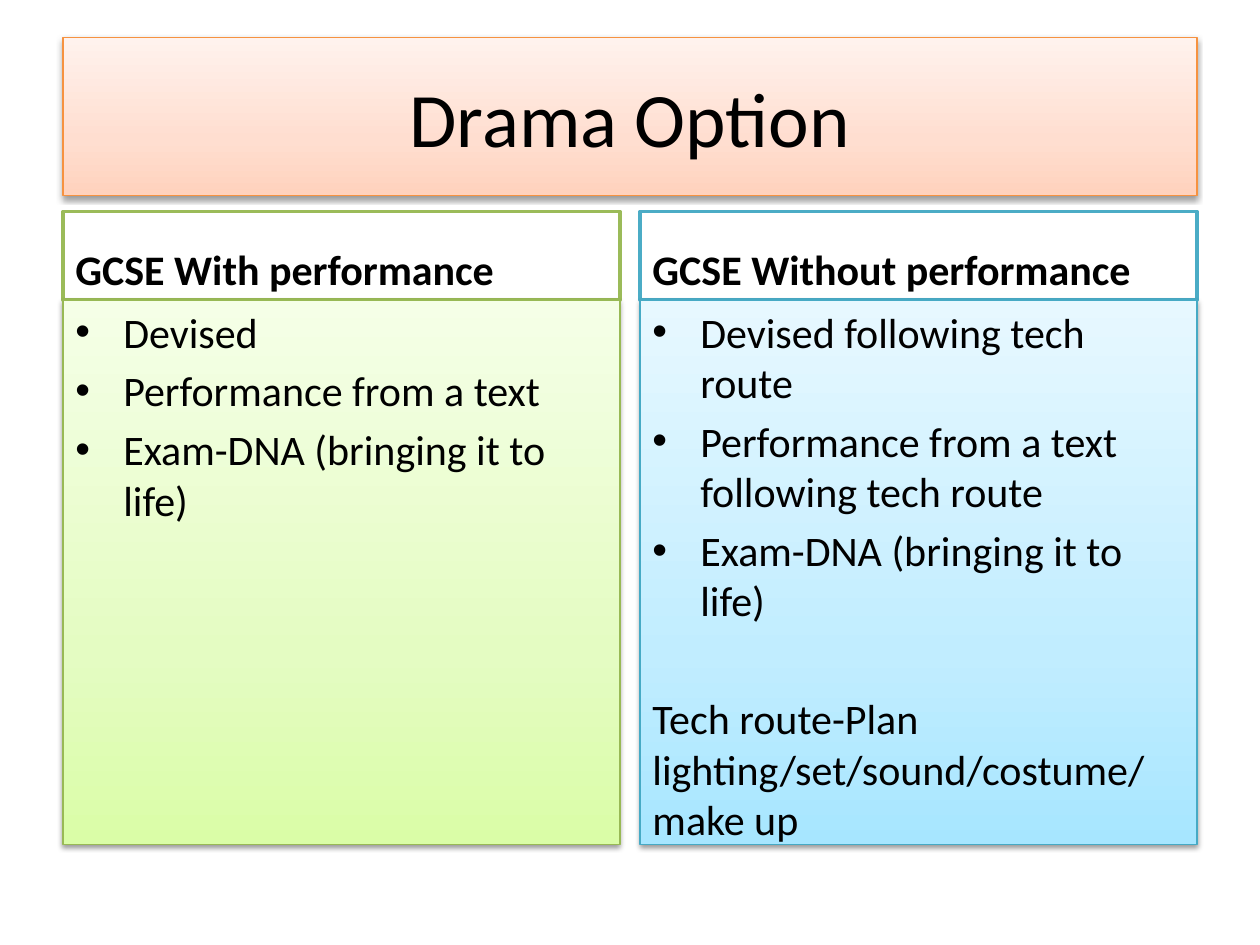
from lxml import etree
from pptx import Presentation
from pptx.dml.color import RGBColor
from pptx.enum.shapes import MSO_SHAPE
from pptx.enum.text import MSO_ANCHOR, PP_ALIGN
from pptx.oxml.ns import qn
from pptx.util import Inches, Pt

RECT = MSO_SHAPE.RECTANGLE
TOP, MIDDLE, BOTTOM = MSO_ANCHOR.TOP, MSO_ANCHOR.MIDDLE, MSO_ANCHOR.BOTTOM
LEFT, CENTER = PP_ALIGN.LEFT, PP_ALIGN.CENTER

MARGIN = 0.5
COLUMN_W = 4.42
COLUMN_STEP = 4.58
COLUMN_TOP, HEADING_H, BODY_H = 1.68, 0.7, 4.32
INDENT = 0.38
PARAGRAPH_GAP, NOTE_GAP = 4.8, 38.5

COLUMNS = [
    ("GCSE With performance", "9BBB59", "98B955",
     ("DAFDA7", "E4FCC2", "F5FFE7"),
     ["Devised", "Performance from a text", "Exam-DNA (bringing it to life)"],
     []),
    ("GCSE Without performance", "4BACC6", "46AAC5",
     ("A7E6FF", "C1EDFF", "E7F8FF"),
     ["Devised following tech route",
      "Performance from a text following tech route",
      "Exam-DNA (bringing it to life)"],
     ["Tech route-Plan lighting/set/sound/costume/", "make up"]),
]


def rgb(color):
    return RGBColor.from_string(color)


def child(parent, tag, **attributes):
    return etree.SubElement(parent, qn(tag), **attributes)


def add_box(s, left, top, width, height, line, line_width, anchor):
    sp = s.shapes.add_shape(RECT, Inches(left), Inches(top),
                            Inches(width), Inches(height))
    sp.shadow.inherit = False
    sp.line.color.rgb = rgb(line)
    sp.line.width = Pt(line_width)
    sp.text_frame.word_wrap = True
    sp.text_frame.vertical_anchor = anchor
    return sp


def fill_gradient(sp, colors):
    sp.fill.gradient()
    sp.fill.gradient_angle = 90
    stops = sp._element.spPr.find(qn("a:gradFill")).find(qn("a:gsLst"))
    for stop in list(stops):
        stops.remove(stop)
    for position, color in zip((0, 35, 100), colors):
        stop = child(stops, "a:gs", pos=str(position * 1000))
        child(stop, "a:srgbClr", val=color)


def add_shadow(sp):
    effects = sp._element.spPr.find(qn("a:effectLst"))
    shadow = child(effects, "a:outerShdw", blurRad=str(Pt(3.1)),
                   dist=str(Pt(1.6)), dir="5400000", rotWithShape="0")
    color = child(shadow, "a:srgbClr", val="000000")
    child(color, "a:alpha", val="38000")


def add_panel(s, left, top, width, height, line, colors, anchor):
    sp = add_box(s, left, top, width, height, line, 0.75, anchor)
    fill_gradient(sp, colors)
    add_shadow(sp)
    return sp.text_frame


def next_paragraph(tf):
    first = tf.paragraphs[0]
    return tf.add_paragraph() if first.runs else first


def add_run(p, text, size=24, bold=False):
    r = p.add_run()
    r.text = text
    r.font.name = "Calibri"
    r.font.size = Pt(size)
    r.font.bold = bold
    r.font.color.rgb = rgb("000000")


def add_bullet(tf, text):
    p = next_paragraph(tf)
    p.alignment = LEFT
    p.space_before = Pt(PARAGRAPH_GAP)
    add_run(p, text)
    pPr = p._p.get_or_add_pPr()
    pPr.set("marL", str(Inches(INDENT)))
    pPr.set("indent", str(-Inches(INDENT)))
    child(pPr, "a:buFont", typeface="Arial")
    child(pPr, "a:buChar", char="•")


def add_note(tf, lines):
    p = next_paragraph(tf)
    p.alignment = LEFT
    p.space_before = Pt(NOTE_GAP)
    for i, line in enumerate(lines):
        if i:
            p.add_line_break()
        add_run(p, line)


def add_title(s, text):
    tf = add_panel(s, MARGIN, 0.3, 9, 1.25, "F69240",
                   ("FFD2BD", "FFDED0", "FFF2ED"), MIDDLE)
    p = tf.paragraphs[0]
    p.alignment = CENTER
    add_run(p, text, size=44)


def add_heading(s, left, text, line):
    sp = add_box(s, left, COLUMN_TOP, COLUMN_W, HEADING_H, line, 2, BOTTOM)
    sp.fill.solid()
    sp.fill.fore_color.rgb = rgb("FFFFFF")
    p = sp.text_frame.paragraphs[0]
    p.alignment = LEFT
    add_run(p, text, bold=True)


def add_column(s, left, heading, heading_line, body_line, colors, bullets, note):
    add_heading(s, left, heading, heading_line)
    tf = add_panel(s, left, COLUMN_TOP + HEADING_H, COLUMN_W, BODY_H,
                   body_line, colors, TOP)
    for text in bullets:
        add_bullet(tf, text)
    if note:
        add_note(tf, note)


def main():
    prs = Presentation()
    prs.slide_width = Inches(10)
    prs.slide_height = Inches(7.5)
    s = prs.slides.add_slide(prs.slide_layouts[6])
    add_title(s, "Drama Option")
    for i, column in enumerate(COLUMNS):
        add_column(s, MARGIN + i * COLUMN_STEP, *column)
    prs.save("out.pptx")


if __name__ == "__main__":
    main()
